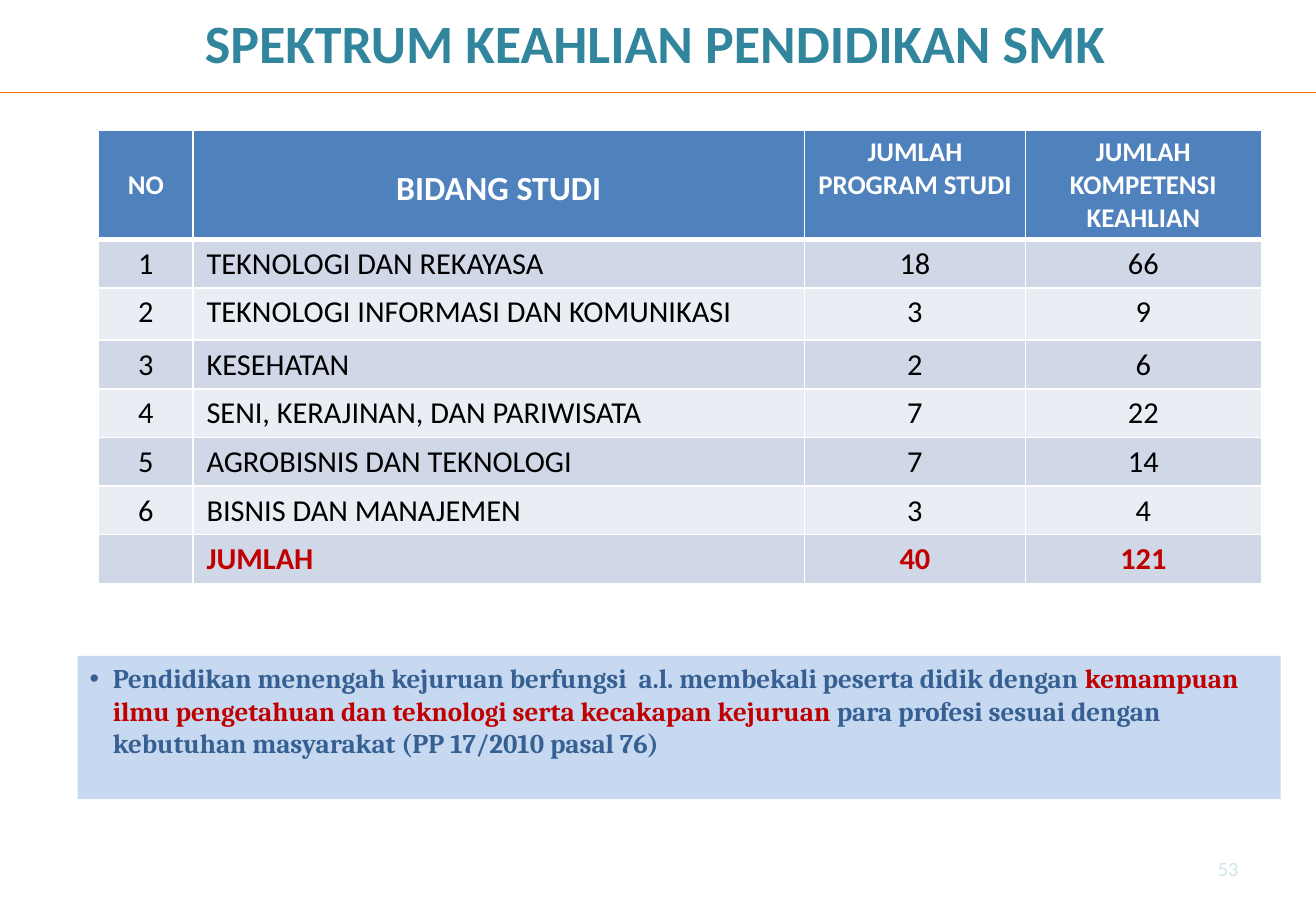
from lxml import etree
from pptx import Presentation
from pptx.dml.color import RGBColor
from pptx.enum.shapes import MSO_CONNECTOR, MSO_SHAPE
from pptx.enum.text import MSO_ANCHOR, PP_ALIGN
from pptx.oxml.ns import qn
from pptx.util import Inches, Pt

LEFT, CENTER, RIGHT = PP_ALIGN.LEFT, PP_ALIGN.CENTER, PP_ALIGN.RIGHT
TOP, MIDDLE = MSO_ANCHOR.TOP, MSO_ANCHOR.MIDDLE
RECTANGLE, STRAIGHT = MSO_SHAPE.RECTANGLE, MSO_CONNECTOR.STRAIGHT

WHITE, BLACK, RED, BLUE = "FFFFFF", "000000", "C00000", "376092"
HEADER_FILL, BAND_FILLS = "4F81BD", ("D0D8E8", "E9EDF4")

TITLE = "SPEKTRUM KEAHLIAN PENDIDIKAN SMK"
PAGE_NUMBER = "53"
# Header lines, font size, top margin
HEADERS = [
    (["NO"], 16, 0.32),
    (["BIDANG STUDI"], 20, 0.32),
    (["JUMLAH", "PROGRAM STUDI"], 16, 0.05),
    (["JUMLAH", "KOMPETENSI", "KEAHLIAN"], 16, 0.05),
]
ROWS = [
    ("1", "TEKNOLOGI DAN REKAYASA", "18", "66"),
    ("2", "TEKNOLOGI INFORMASI DAN KOMUNIKASI", "3", "9"),
    ("3", "KESEHATAN", "2", "6"),
    ("4", "SENI, KERAJINAN, DAN PARIWISATA", "7", "22"),
    ("5", "AGROBISNIS DAN TEKNOLOGI", "7", "14"),
    ("6", "BISNIS DAN MANAJEMEN", "3", "4"),
    ("", "JUMLAH", "40", "121"),
]
COLUMN_WIDTHS = [0.78, 5.03, 1.82, 1.94]
ROW_HEIGHTS = [0.9, 0.4, 0.43] + [0.4] * 5
NOTE = [
    ("Pendidikan menengah kejuruan berfungsi  a.l. membekali peserta didik dengan ", BLUE),
    ("kemampuan ilmu pengetahuan dan teknologi serta kecakapan kejuruan ", RED),
    ("para profesi sesuai dengan kebutuhan masyarakat (PP 17/2010 pasal 76)", BLUE),
]


def rgb(color):
    return RGBColor.from_string(color)


def fill_solid(target, color):
    target.fill.solid()
    target.fill.fore_color.rgb = rgb(color)


def set_font(font, size, color, bold=False, name="Calibri"):
    font.name, font.size, font.bold = name, Pt(size), bold
    font.color.rgb = rgb(color)


def write_lines(frame, lines, align, size, color, bold=False):
    for index, line in enumerate(lines):
        paragraph = frame.add_paragraph() if index else frame.paragraphs[0]
        paragraph.text = line
        paragraph.alignment = align
        set_font(paragraph.font, size, color, bold)


def add_text(slide, box, text, align, size, color, bold=False):
    frame = slide.shapes.add_textbox(*map(Inches, box)).text_frame
    frame.word_wrap = True
    frame.vertical_anchor = MIDDLE
    write_lines(frame, [text], align, size, color, bold)


def add_border(cell, side, width):
    line = etree.SubElement(cell._tc.get_or_add_tcPr(), qn(f"a:ln{side}"), w=str(Pt(width)))
    solid = etree.SubElement(line, qn("a:solidFill"))
    etree.SubElement(solid, qn("a:srgbClr"), val=WHITE)


def style_cell(cell, fill, row, margin_top=0.05):
    cell.margin_left = cell.margin_right = Inches(0.11)
    cell.margin_top, cell.margin_bottom = Inches(margin_top), Inches(0.05)
    cell.vertical_anchor = TOP
    for side in "LRTB":
        under_header = (row, side) in ((0, "B"), (1, "T"))
        add_border(cell, side, 3 if under_header else 1)
    fill_solid(cell, fill)


def add_field_table(slide):
    box = (0.81, 1.07, sum(COLUMN_WIDTHS), sum(ROW_HEIGHTS))
    frame = slide.shapes.add_table(len(ROW_HEIGHTS), len(COLUMN_WIDTHS), *map(Inches, box))
    table = frame.table
    for column, width in zip(table.columns, COLUMN_WIDTHS):
        column.width = Inches(width)
    for row, height in zip(table.rows, ROW_HEIGHTS):
        row.height = Inches(height)
    for column, (lines, size, margin_top) in enumerate(HEADERS):
        cell = table.cell(0, column)
        style_cell(cell, HEADER_FILL, 0, margin_top)
        write_lines(cell.text_frame, lines, CENTER, size, WHITE, True)
    for row, values in enumerate(ROWS, start=1):
        is_total = row == len(ROWS)
        for column, value in enumerate(values):
            cell = table.cell(row, column)
            style_cell(cell, BAND_FILLS[(row - 1) % 2], row)
            write_lines(cell.text_frame, [value], LEFT if column == 1 else CENTER,
                        18, RED if is_total else BLACK, is_total)


def add_note(slide):
    shape = slide.shapes.add_shape(RECTANGLE, *map(Inches, (0.64, 5.4, 9.9, 1.18)))
    shape.shadow.inherit = False
    fill_solid(shape, "C6D9F1")
    shape.line.fill.background()
    shape.text_frame.word_wrap = True
    shape.text_frame.vertical_anchor = TOP
    paragraph = shape.text_frame.paragraphs[0]
    paragraph.alignment = LEFT
    for text, color in NOTE:
        run = paragraph.add_run()
        run.text = text
        set_font(run.font, 16, color, True, "Cambria")
    properties = paragraph._p.get_or_add_pPr()
    properties.set("marL", str(Inches(0.19)))
    properties.set("indent", str(-Inches(0.19)))
    bullet_color = etree.SubElement(properties, qn("a:buClr"))
    etree.SubElement(bullet_color, qn("a:srgbClr"), val=BLUE)
    etree.SubElement(properties, qn("a:buFont"), typeface="Arial")
    etree.SubElement(properties, qn("a:buChar"), char="•")


def add_title_rule(slide):
    points = (0, 0.76, 10.83, 0.76)
    rule = slide.shapes.add_connector(STRAIGHT, *map(Inches, points))
    rule.line.color.rgb = rgb("E46C0A")
    rule.line.width = Pt(0.75)
    etree.SubElement(rule._element.spPr, qn("a:effectLst"))


def main():
    presentation = Presentation()
    presentation.slide_width, presentation.slide_height = Inches(10.83), Inches(7.5)
    slide = presentation.slides.add_slide(presentation.slide_layouts[6])
    add_text(slide, (-0.02, 0.09, 10.83, 0.51), TITLE, CENTER, 32, "31859C", True)
    add_field_table(slide)
    add_note(slide)
    add_title_rule(slide)
    add_text(slide, (7.76, 6.95, 2.53, 0.4), PAGE_NUMBER, RIGHT, 12, "D0E6EB")
    presentation.save("out.pptx")


if __name__ == "__main__":
    main()
